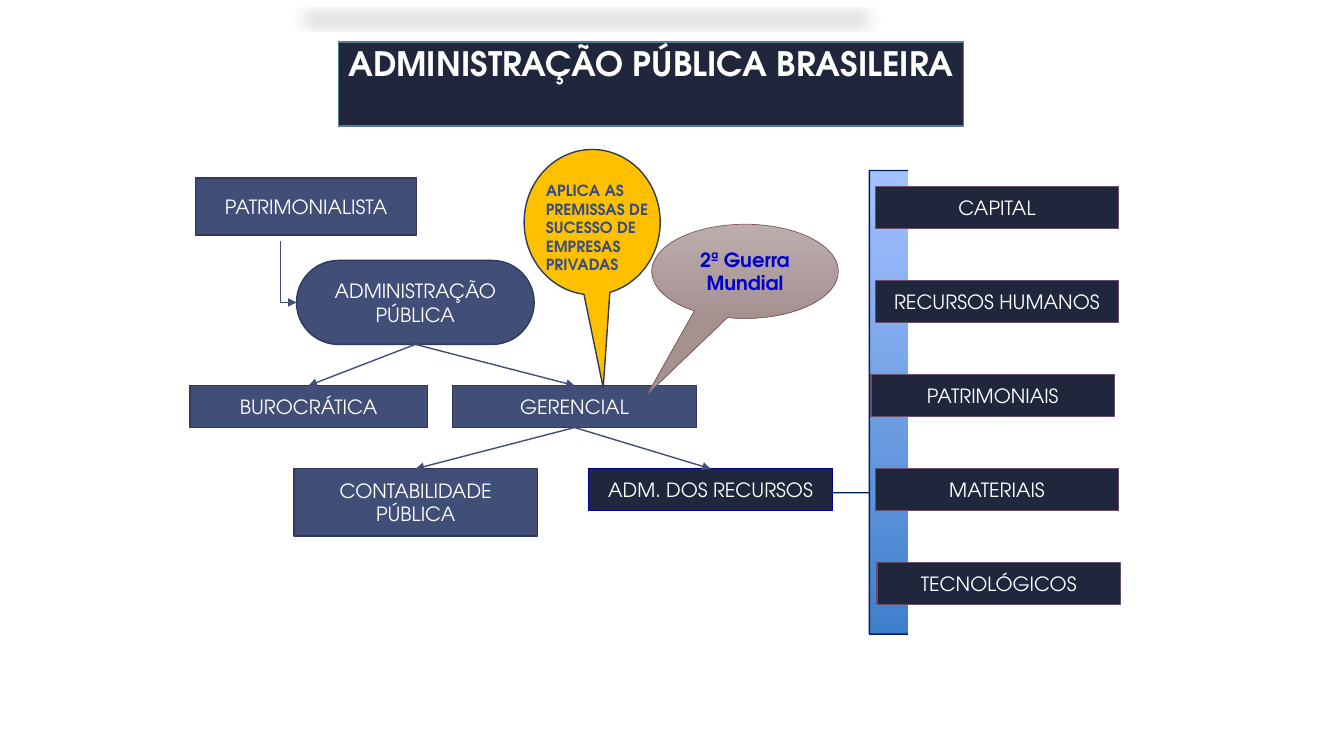
from dataclasses import dataclass

from lxml.etree import SubElement
from pptx import Presentation
from pptx.dml.color import RGBColor as RGB
from pptx.enum.shapes import MSO_CONNECTOR as LINK, MSO_SHAPE as SHAPE
from pptx.enum.text import MSO_ANCHOR as ANCHOR, MSO_AUTO_SIZE as AUTO, PP_ALIGN as ALIGN
from pptx.oxml import parse_xml
from pptx.oxml.ns import nsdecls, qn
from pptx.util import Inches, Pt

COLUMNS, ROWS = 160, 90
CELL = Inches(7.5) / ROWS


@dataclass(frozen=True)
class Theme:
    font: str = "TeX Gyre Adventor"
    title_size: float = 24
    label_size: float = 14
    note_size: float = 11
    white: str = "FFFFFF"
    navy: str = "20273C"
    slate: str = "414E77"
    slate_edge: str = "303A58"
    title_edge: str = "537E91"
    resource_edge: str = "674E6D"
    hub_edge: str = "000099"
    brace: str = "002060"
    amber: str = "FFC000"
    note: str = "374C81"
    war: str = "0000CC"
    war_edge: str = "7E5C5C"
    war_fill: tuple = ("BCADAD", "A69191")


THEME = Theme()


@dataclass(frozen=True)
class Box:
    x: float
    y: float
    w: float
    h: float

    def inner(self, x, y, w, h):
        return Box(self.x + x, self.y + y, w, h)

    def emu(self):
        return [round(v * CELL) for v in (self.x, self.y, self.w, self.h)]


def rgb(color):
    return RGB.from_string(color)


def write(owner, text, size, color, bold=False, align=ALIGN.CENTER, anchor=ANCHOR.MIDDLE):
    frame = owner.text_frame
    frame.text = text
    frame.word_wrap = True
    frame.auto_size = AUTO.NONE
    frame.vertical_anchor = anchor
    paragraph = frame.paragraphs[0]
    paragraph.alignment = align
    font = paragraph.runs[0].font
    font.name, font.size, font.bold = THEME.font, Pt(size), bold
    font.color.rgb = rgb(color)


def paint(owner, fill, edge, width=1):
    if fill:
        owner.fill.solid()
        owner.fill.fore_color.rgb = rgb(fill)
    owner.line.color.rgb = rgb(edge)
    owner.line.width = Pt(width)


def draw(slide, kind, box, fill, edge, width=1, adjust=()):
    figure = slide.shapes.add_shape(kind, *box.emu())
    figure.shadow.inherit = False
    for index, value in enumerate(adjust):
        figure.adjustments[index] = value
    paint(figure, fill, edge, width)
    return figure


def node(slide, box, text, fill=THEME.slate, edge=THEME.slate_edge, kind=SHAPE.RECTANGLE, adjust=()):
    figure = draw(slide, kind, box, fill, edge, adjust=adjust)
    write(figure, text, THEME.label_size, THEME.white)
    return figure


def arrow(slide, kind, ends=(0, 0, 0, 0)):
    link = slide.shapes.add_connector(kind, *ends)
    link.line.color.rgb = rgb(THEME.slate)
    link.line.width = Pt(1)
    outline = link._element.spPr
    SubElement(outline.find(qn("a:ln")), qn("a:tailEnd"), type="triangle")
    SubElement(outline, qn("a:effectLst"))
    return link


def branch(slide, parent, children):
    for child in children:
        link = arrow(slide, LINK.STRAIGHT)
        link.begin_connect(parent, 2)
        link.end_connect(child, 0)


def corner(slide, x1, y1, x2, y2):
    middle_x, middle_y = (x1 + x2) / 2, (y1 + y2) / 2
    half_w, half_h = (y2 - y1) / 2, (x2 - x1) / 2
    ends = (middle_x + half_w, middle_y - half_h, middle_x - half_w, middle_y + half_h)
    link = arrow(slide, LINK.ELBOW, [round(v * CELL) for v in ends])
    outline = link._element.spPr
    outline.find(qn("a:xfrm")).set("rot", "16200000")
    outline.find(qn("a:prstGeom")).set("prst", "bentConnector2")


def header(slide, box):
    title = slide.shapes.title
    title.left, title.top, title.width, title.height = box.emu()
    paint(title, THEME.navy, THEME.title_edge)
    write(title, "ADMINISTRAÇÃO PÚBLICA BRASILEIRA", THEME.title_size, THEME.white, True, anchor=ANCHOR.TOP)
    title.text_frame.margin_left = title.text_frame.margin_right = Inches(0.05)
    title.text_frame.paragraphs[0].line_spacing = 0.9
    title._element.spPr.append(parse_xml(
        f'<a:effectLst {nsdecls("a")}><a:outerShdw blurRad="152400" dist="317500" dir="5400000" '
        'sx="90000" sy="-19000" rotWithShape="0"><a:srgbClr val="000000"><a:alpha val="15000"/>'
        '</a:srgbClr></a:outerShdw></a:effectLst>'))


def models(slide, box):
    node(slide, box.inner(0.7, 3.4, 26.3, 6.8), "PATRIMONIALISTA")
    administration = node(slide, box.inner(12.7, 13.2, 28.3, 10), "ADMINISTRAÇÃO PÚBLICA",
                          kind=SHAPE.ROUNDED_RECTANGLE, adjust=(0.5,))
    bureaucratic = node(slide, box.inner(0, 28.1, 28.3, 5), "BUROCRÁTICA")
    managerial = node(slide, box.inner(31.3, 28.1, 29, 5), "GERENCIAL")
    accounting = node(slide, box.inner(12.4, 38, 29, 8), "CONTABILIDADE PÚBLICA")
    hub = node(slide, box.inner(47.5, 38, 29, 5), "ADM. DOS RECURSOS", THEME.navy, THEME.hub_edge)
    branch(slide, administration, (bureaucratic, managerial))
    branch(slide, managerial, (accounting, hub))
    corner(slide, box.x + 10.8, box.y + 10.9, box.x + 12.7, box.y + 18.2)


def resources(slide, box):
    draw(slide, SHAPE.LEFT_BRACE, box.inner(0, 0, 9.2, box.h), None, THEME.brace, adjust=(0, 0.695))
    kinds = (("CAPITAL", 5.3), ("RECURSOS HUMANOS", 5.3), ("PATRIMONIAIS", 4.8),
             ("MATERIAIS", 5.3), ("TECNOLÓGICOS", 5.5))
    for row, (kind, indent) in enumerate(kinds):
        node(slide, box.inner(indent, 1.9 + 11.2 * row, 29, 5), kind, THEME.navy, THEME.resource_edge)


def callouts(slide, box):
    war = draw(slide, SHAPE.OVAL_CALLOUT, box.inner(55, 8.9, 22.2, 11.2), None,
               THEME.war_edge, 0.5, (-0.523, 1.305))
    war.fill.gradient()
    war.fill.gradient_angle = 270
    for stop, color in zip(war.fill.gradient_stops, THEME.war_fill):
        stop.color.rgb = rgb(color)
    write(war, "2ª Guerra Mundial", THEME.label_size, THEME.war, True)
    draw(slide, SHAPE.OVAL_CALLOUT, box.inner(39.8, 0, 16.2, 17.3), THEME.amber,
         THEME.slate_edge, adjust=(0.081, 1.139))
    premises = slide.shapes.add_textbox(*box.inner(41.2, 3.2, 18.1, 12.4).emu())
    write(premises, "APLICA AS PREMISSAS DE SUCESSO DE EMPRESAS PRIVADAS",
          THEME.note_size, THEME.note, True, ALIGN.LEFT, ANCHOR.TOP)


def main():
    deck = Presentation()
    deck.slide_width, deck.slide_height = round(COLUMNS * CELL), round(ROWS * CELL)
    slide = deck.slides.add_slide(deck.slide_layouts[5])
    flow = Box(22.6, 17.8, 77.2, 46)
    header(slide, Box(40.3, 5, 74.4, 10))
    models(slide, flow)
    resources(slide, Box(98.9, 20.3, 34.6, 55.2))
    callouts(slide, flow)
    deck.save("out.pptx")


if __name__ == "__main__":
    main()
